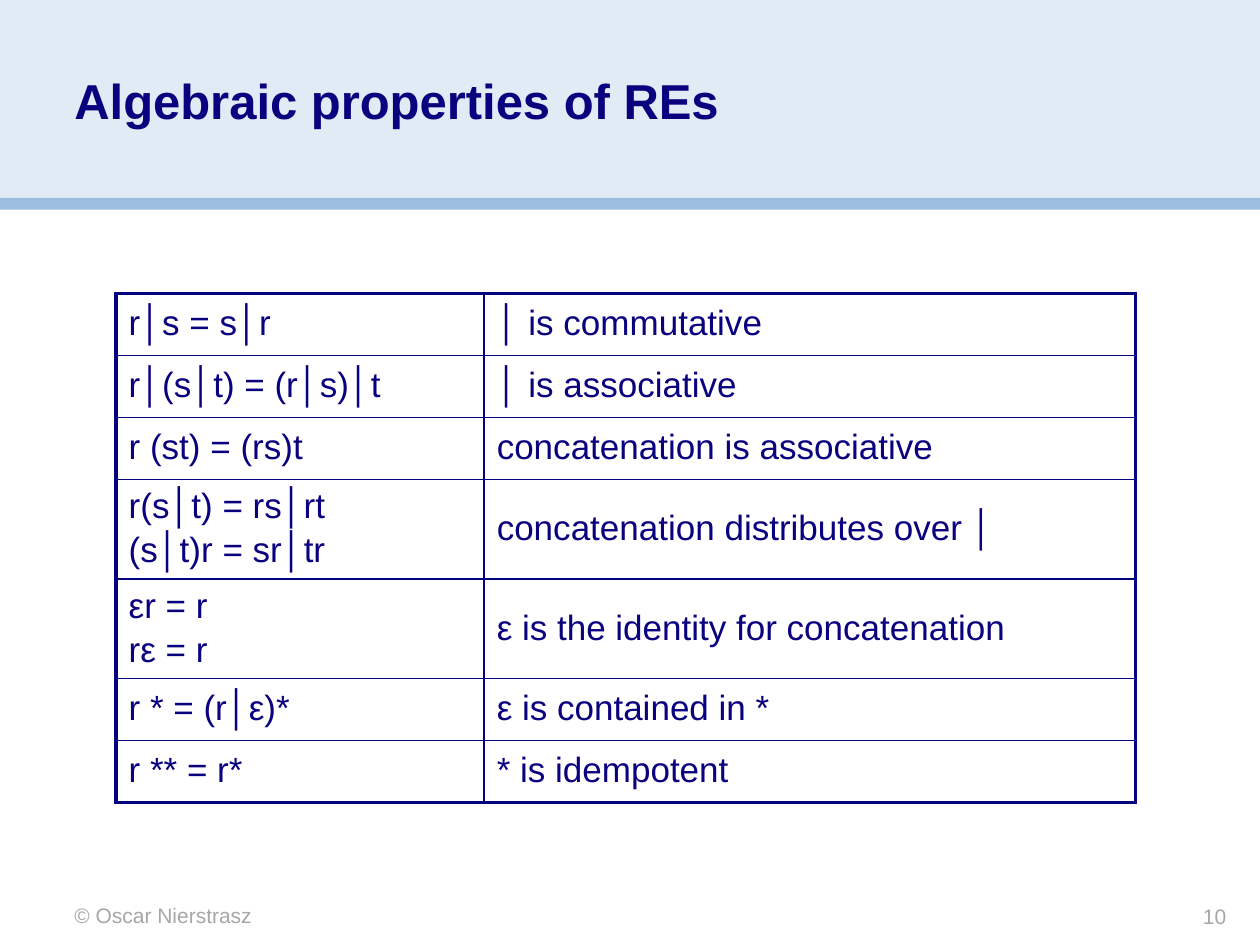
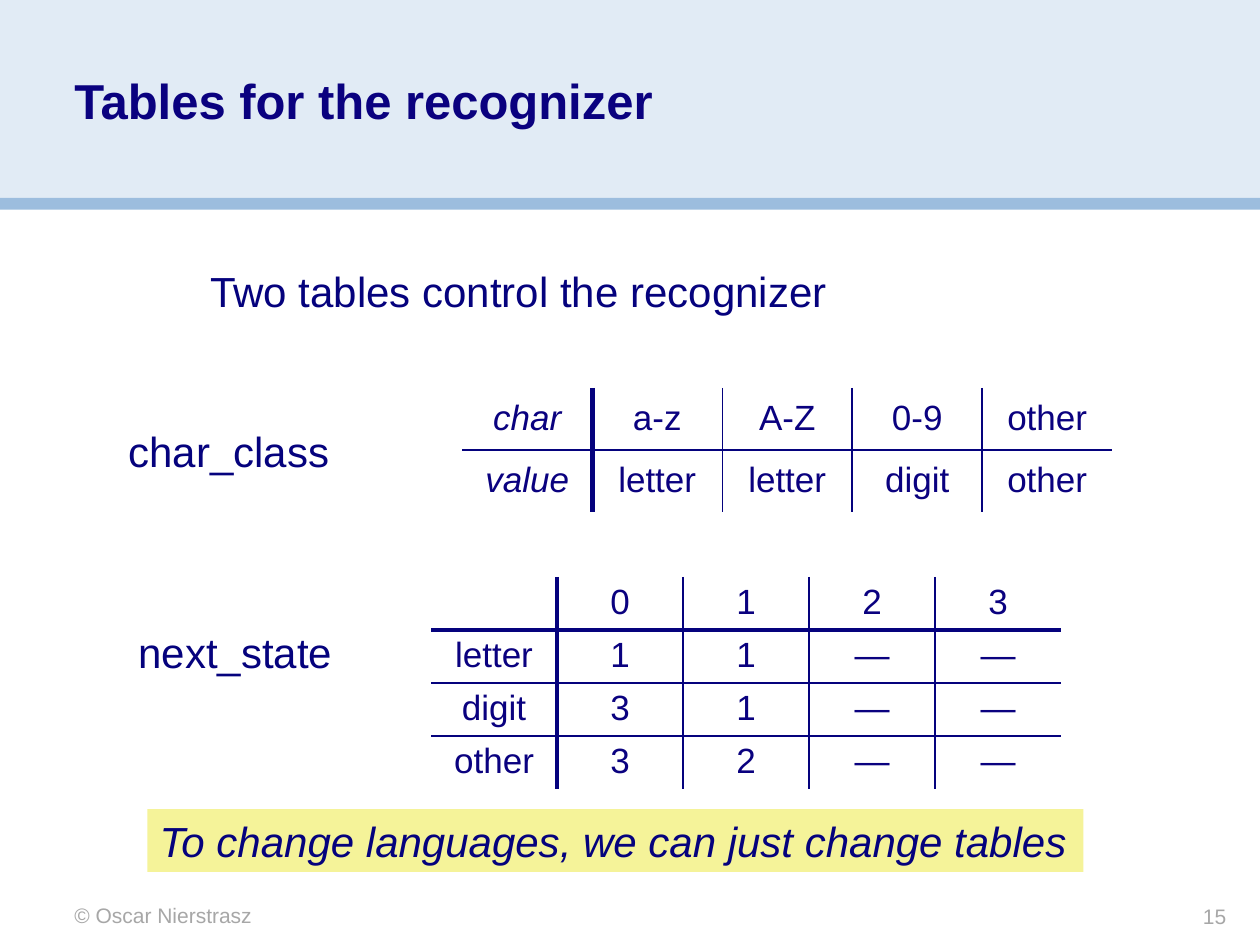
import dataclasses

import lxml.etree
import pptx
import pptx.dml.color
import pptx.enum.shapes
import pptx.enum.text
import pptx.oxml.ns
import pptx.util

Cm = pptx.util.Cm
Pt = pptx.util.Pt
Align = pptx.enum.text.PP_ALIGN
Anchor = pptx.enum.text.MSO_ANCHOR


@dataclasses.dataclass(frozen=True)
class Theme:
    font: str = "Arial"
    text: str = "0A017F"
    line: str = "05027D"
    band: str = "E1EBF5"
    strip: str = "9CBDDE"
    note: str = "F5F399"
    muted: str = "A7A7A7"
    title_size: int = 28
    body_size: int = 24
    cell_size: int = 20
    footer_size: int = 12
    thin: float = 1
    frame: float = 2.25
    heavy: float = 3


def rgb(value):
    return pptx.dml.color.RGBColor.from_string(value)


def apply_format(target, values):
    for name, value in values.items():
        setattr(target, name, value)


class Deck:
    def __init__(self, theme):
        self.theme = theme
        self.presentation = pptx.Presentation()
        apply_format(self.presentation, {"slide_width": Cm(25.4), "slide_height": Cm(19.05)})
        self.slide = None

    def add_slide(self, title, number):
        theme = self.theme
        self.slide = self.presentation.slides.add_slide(self.presentation.slide_layouts[6])
        self.rectangle((0, 0, 25.4, 4.01), theme.band)
        self.rectangle((0, 3.99, 25.4, 0.24), theme.strip)
        self.text((1.5, 1.55, 22.43, 2.26), title, theme.title_size, theme.text,
                  {"bold": True}, {"line_spacing": 0.9})
        self.text((20.96, 18.21, 3.76, 0.51), str(number), theme.footer_size, theme.muted,
                  paragraph_format={"alignment": Align.RIGHT})
        self.text((1.5, 18.19, 10.59, 0.51), "© Oscar Nierstrasz", theme.footer_size, theme.muted)

    def rectangle(self, box, color):
        shape = self.slide.shapes.add_shape(
            pptx.enum.shapes.MSO_SHAPE.RECTANGLE, *map(Cm, box))
        shape.shadow.inherit = False
        shape.fill.solid()
        shape.fill.fore_color.rgb = rgb(color)
        shape.line.fill.background()
        return shape

    def fill_paragraph(self, paragraph, text, size, color, font_format=None, paragraph_format=None):
        run = paragraph.add_run()
        run.text = text
        apply_format(run.font, {"name": self.theme.font, "size": Pt(size), **(font_format or {})})
        run.font.color.rgb = rgb(color)
        apply_format(paragraph, {"alignment": Align.LEFT, **(paragraph_format or {})})

    def text(self, box, text, size, color, font_format=None, paragraph_format=None):
        frame = self.slide.shapes.add_textbox(*map(Cm, box)).text_frame
        apply_format(frame, {"word_wrap": True, "margin_left": 0, "margin_right": 0,
                             "margin_top": 0, "margin_bottom": 0})
        self.fill_paragraph(frame.paragraphs[0], text, size, color, font_format, paragraph_format)

    def label(self, box, text, fill=None, italic=False):
        if fill:
            shape = self.rectangle(box, fill)
        else:
            shape = self.slide.shapes.add_textbox(*map(Cm, box))
        frame = shape.text_frame
        apply_format(frame, {"word_wrap": False, "vertical_anchor": Anchor.TOP})
        self.fill_paragraph(frame.paragraphs[0], text, self.theme.body_size, self.theme.line,
                            {"italic": italic})

    def border(self, cell, widths):
        properties = cell._tc.get_or_add_tcPr()
        for index, (side, width) in enumerate(zip("LRTB", widths)):
            line = lxml.etree.Element(pptx.oxml.ns.qn(f"a:ln{side}"), w=str(int(Pt(width))))
            if width:
                fill = lxml.etree.SubElement(line, pptx.oxml.ns.qn("a:solidFill"))
                lxml.etree.SubElement(fill, pptx.oxml.ns.qn("a:srgbClr"), val=self.theme.line)
            else:
                lxml.etree.SubElement(line, pptx.oxml.ns.qn("a:noFill"))
            properties.insert(index, line)

    def table(self, corner, columns, heights, rows, vertical, horizontal,
              alignment=Align.CENTER, italic_head=False):
        theme = self.theme
        table = self.slide.shapes.add_table(
            len(rows), len(columns), *map(Cm, corner), Cm(sum(columns)), Cm(sum(heights))).table
        apply_format(table, {"first_row": False, "horz_banding": False})
        for column, width in zip(table.columns, columns):
            column.width = Cm(width)
        for row, height in zip(table.rows, heights):
            row.height = Cm(height)
        paragraph_format = {"alignment": alignment, "line_spacing": 0.95, "space_before": Pt(4)}
        for r, values in enumerate(rows):
            for c, value in enumerate(values):
                cell = table.cell(r, c)
                cell.vertical_anchor = Anchor.MIDDLE
                cell.fill.background()
                self.border(cell, vertical[c:c + 2] + horizontal[r:r + 2])
                for index, line in enumerate(value.splitlines()):
                    frame = cell.text_frame
                    paragraph = frame.add_paragraph() if index else frame.paragraphs[0]
                    self.fill_paragraph(paragraph, line, theme.cell_size, theme.text,
                                        {"italic": italic_head and c == 0}, paragraph_format)


def add_properties_slide(deck):
    theme = deck.theme
    deck.add_slide("Algebraic properties of REs", 10)
    properties = [
        ("r│s = s│r", "│ is commutative"),
        ("r│(s│t) = (r│s)│t", "│ is associative"),
        ("r (st) = (rs)t", "concatenation is associative"),
        ("r(s│t) = rs│rt\n(s│t)r = sr│tr", "concatenation distributes over │"),
        ("εr = r\nrε = r", "ε is the identity for concatenation"),
        ("r * = (r│ε)*", "ε is contained in *"),
        ("r ** = r*", "* is idempotent"),
    ]
    heights = [1.9 if "\n" in law else 1.25 for law, _ in properties]
    inner_lines = [theme.thin] * (len(properties) - 1)
    deck.table((2.34, 5.92), [7.42, 13.13], heights, properties,
               [theme.frame, theme.thin, theme.frame],
               [theme.frame, *inner_lines, theme.frame], Align.LEFT)


def add_recognizer_slide(deck):
    theme = deck.theme
    deck.add_slide("Tables for the recognizer", 15)
    deck.label((3.99, 5.23, 12.98, 1.27), "Two tables control the recognizer")
    vertical = [0, theme.heavy, theme.thin, theme.thin, theme.thin, 0]

    deck.label((2.34, 8.46, 4.57, 1.27), "char_class")
    char_classes = [
        ("char", "a-z", "A-Z", "0-9", "other"),
        ("value", "letter", "letter", "digit", "other"),
    ]
    deck.table((9.32, 7.82), [2.62] * 5, [1.25] * 2, char_classes,
               vertical, [0, theme.thin, 0], italic_head=True)

    deck.label((2.54, 12.5, 4.42, 1.27), "next_state")
    next_states = [
        ("", "0", "1", "2", "3"),
        ("letter", "1", "1", "—", "—"),
        ("digit", "3", "1", "—", "—"),
        ("other", "3", "2", "—", "—"),
    ]
    deck.table((8.69, 11.63), [2.54] * 5, [1.07] * 4, next_states,
               vertical, [0, theme.heavy, theme.thin, theme.thin, 0])

    deck.label((2.97, 16.31, 18.87, 1.27), "To change languages, we can just change tables",
               fill=theme.note, italic=True)


def main():
    deck = Deck(Theme())
    add_properties_slide(deck)
    add_recognizer_slide(deck)
    deck.presentation.save("out.pptx")


if __name__ == "__main__":
    main()
